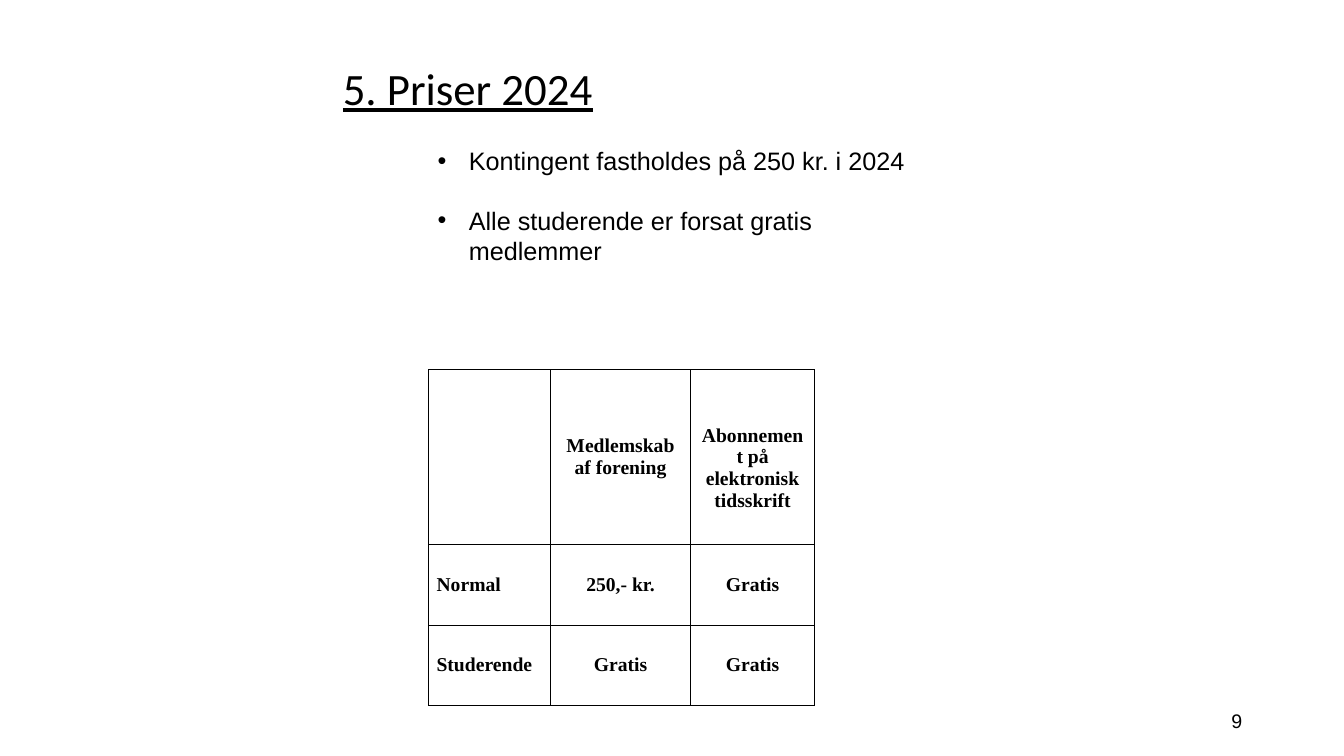
from lxml.etree import SubElement
from pptx import Presentation
from pptx.dml.color import RGBColor
from pptx.enum.text import MSO_ANCHOR, MSO_AUTO_SIZE, PP_ALIGN
from pptx.oxml.ns import qn
from pptx.util import Inches, Pt


def color(hex_string):
    return RGBColor.from_string(hex_string)


class PriceSlide:
    """Holds the style and the current slide."""

    INK = "000000"
    BORDER_WIDTH = Pt(0.75)

    def __init__(self, presentation):
        self.slide = presentation.slides.add_slide(presentation.slide_layouts[1])

    def place(self, shape, left, top, width, height):
        shape.left, shape.top = Inches(left), Inches(top)
        shape.width, shape.height = Inches(width), Inches(height)

    def style(self, paragraph, font_name, size, alignment=PP_ALIGN.LEFT, bold=False):
        paragraph.alignment = alignment
        font = paragraph.font
        font.name, font.size, font.bold = font_name, Pt(size), bold
        font.color.rgb = color(self.INK)

    def title(self, text, *box):
        shape = self.slide.shapes.title
        self.place(shape, *box)
        frame = shape.text_frame
        frame.text = text
        frame.auto_size = MSO_AUTO_SIZE.NONE
        frame.vertical_anchor = MSO_ANCHOR.MIDDLE
        paragraph = frame.paragraphs[0]
        self.style(paragraph, "Calibri", 32)
        paragraph.font.underline = True
        paragraph.line_spacing = 0.9

    def bullets(self, items, *box):
        shape = self.slide.placeholders[1]
        self.place(shape, *box)
        frame = shape.text_frame
        frame.text = "\n".join(items)
        frame.auto_size = MSO_AUTO_SIZE.NONE
        for index, paragraph in enumerate(frame.paragraphs):
            self.style(paragraph, "Arial", 18)
            paragraph.space_before = Pt(21 if index else 0)
            properties = paragraph._p.get_or_add_pPr()
            properties.set("marL", str(Inches(0.31)))
            properties.set("indent", str(Inches(-0.31)))
            SubElement(properties, qn("a:buFont")).set("typeface", "Arial")
            SubElement(properties, qn("a:buChar")).set("char", "•")

    def page_number(self, text, *box):
        shape = self.slide.shapes.add_textbox(*map(Inches, box))
        frame = shape.text_frame
        frame.word_wrap = True
        frame.vertical_anchor = MSO_ANCHOR.MIDDLE
        frame.text = text
        self.style(frame.paragraphs[0], "Arial", 14, PP_ALIGN.RIGHT)

    def borders(self, cell):
        properties = cell._tc.get_or_add_tcPr()
        for side in ("a:lnL", "a:lnR", "a:lnT", "a:lnB"):
            line = SubElement(properties, qn(side), w=str(self.BORDER_WIDTH))
            fill = SubElement(line, qn("a:solidFill"))
            SubElement(fill, qn("a:srgbClr"), val=self.INK)

    def table(self, rows, left, top, widths, heights):
        shape = self.slide.shapes.add_table(
            len(rows), len(widths), Inches(left), Inches(top),
            Inches(sum(widths)), Inches(sum(heights)))
        table = shape.table
        table.first_row = table.horz_banding = False
        for column, width in zip(table.columns, widths):
            column.width = Inches(width)
        for row, height in zip(table.rows, heights):
            row.height = Inches(height)
        for row_index, texts in enumerate(rows):
            for column_index, text in enumerate(texts):
                cell = table.cell(row_index, column_index)
                self.borders(cell)
                cell.fill.background()
                cell.vertical_anchor = MSO_ANCHOR.MIDDLE
                cell.margin_left = cell.margin_right = Inches(0.08)
                cell.text = text
                alignment = PP_ALIGN.CENTER if column_index else PP_ALIGN.LEFT
                self.style(cell.text_frame.paragraphs[0], "Times New Roman", 14,
                           alignment, bold=True)
        return table


def main():
    presentation = Presentation()
    presentation.slide_width = Inches(13.33)
    presentation.slide_height = Inches(7.5)
    prices = PriceSlide(presentation)

    # Heading and page number
    prices.title("5. Priser 2024", 3.3, 0.28, 6.75, 1.25)
    prices.page_number("9", 9.42, 6.95, 3, 0.4)

    # Price table; the subscription heading sits slightly lower
    price_table = prices.table(
        [["", "Medlemskab af forening", "Abonnement på elektronisk tidsskrift"],
         ["Normal", "250,- kr.", "Gratis"],
         ["Studerende", "Gratis", "Gratis"]],
        4.25, 3.67, [1.21, 1.39, 1.23], [1.73, 0.8, 0.8])
    price_table.cell(0, 2).margin_top = Inches(0.27)

    # Membership decisions
    prices.bullets(
        ["Kontingent fastholdes på 250 kr. i 2024",
         "Alle studerende er forsat gratis medlemmer"],
        4.24, 1.39, 4.9, 1.62)

    presentation.save("out.pptx")


if __name__ == "__main__":
    main()
